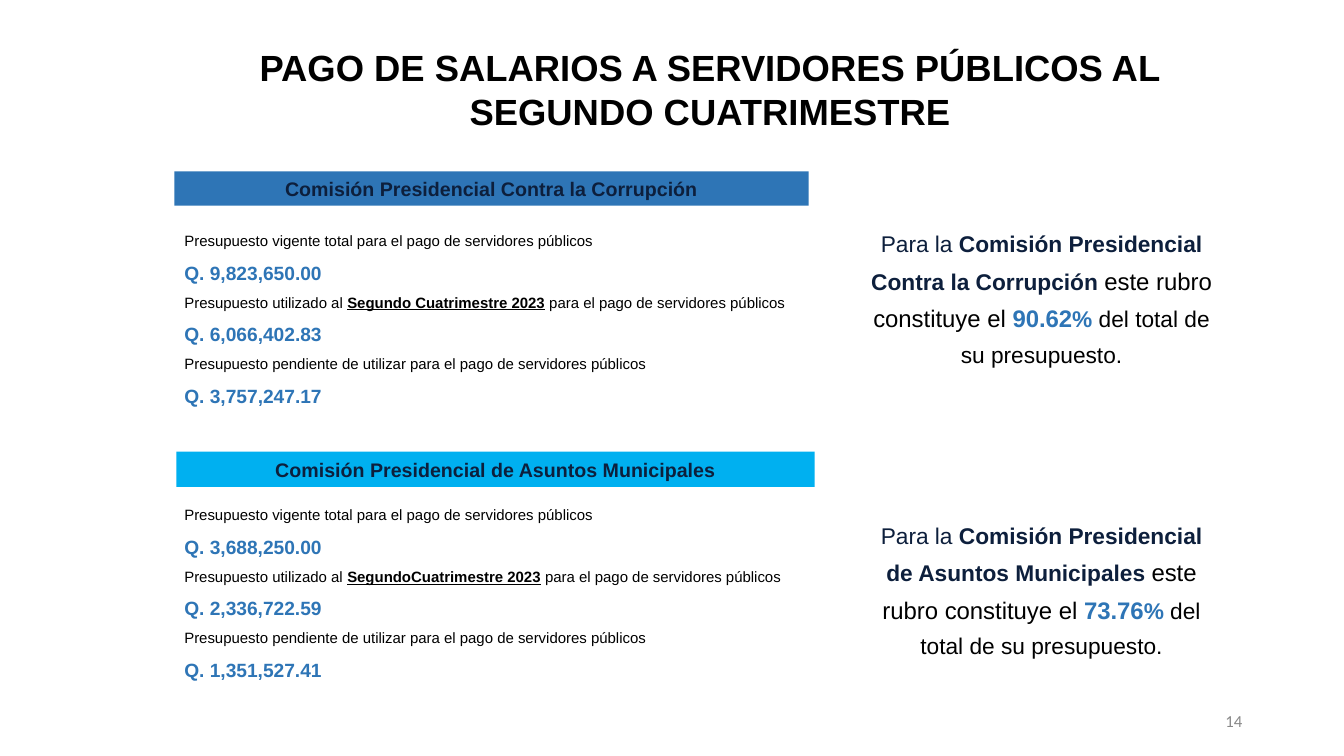
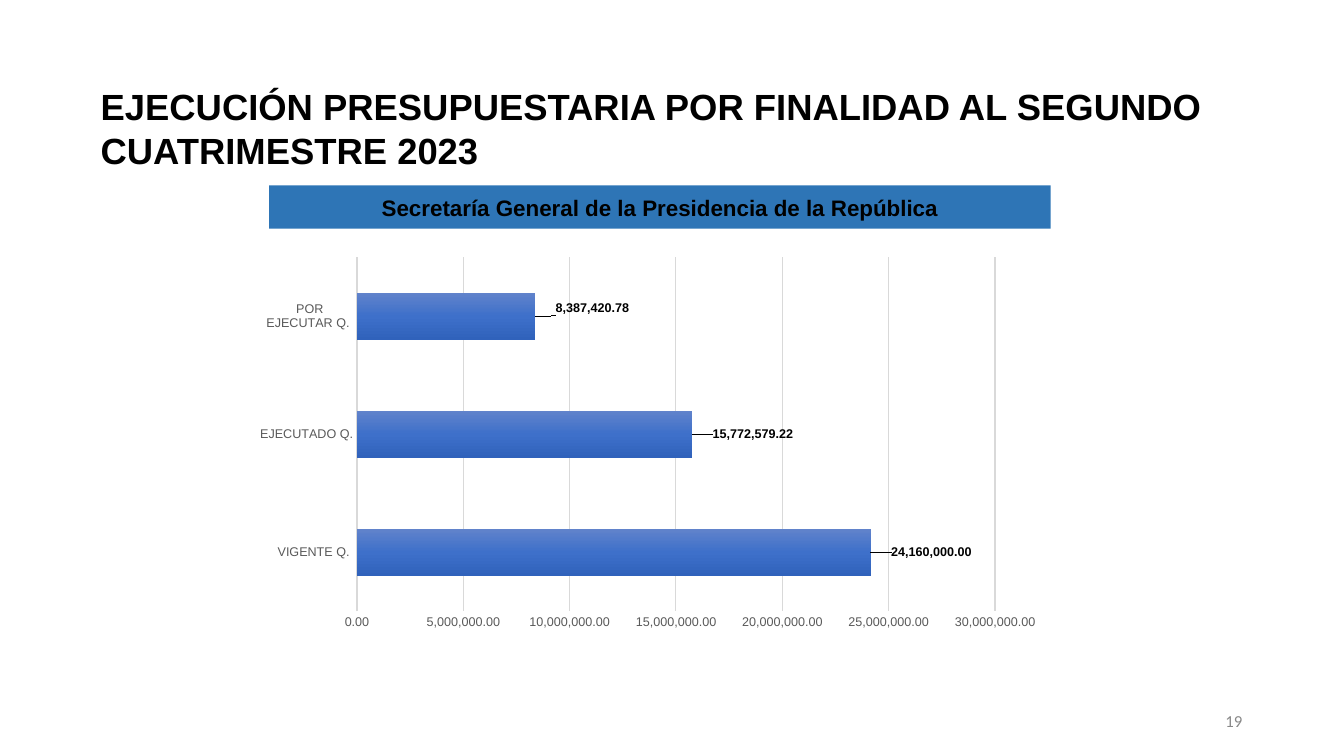
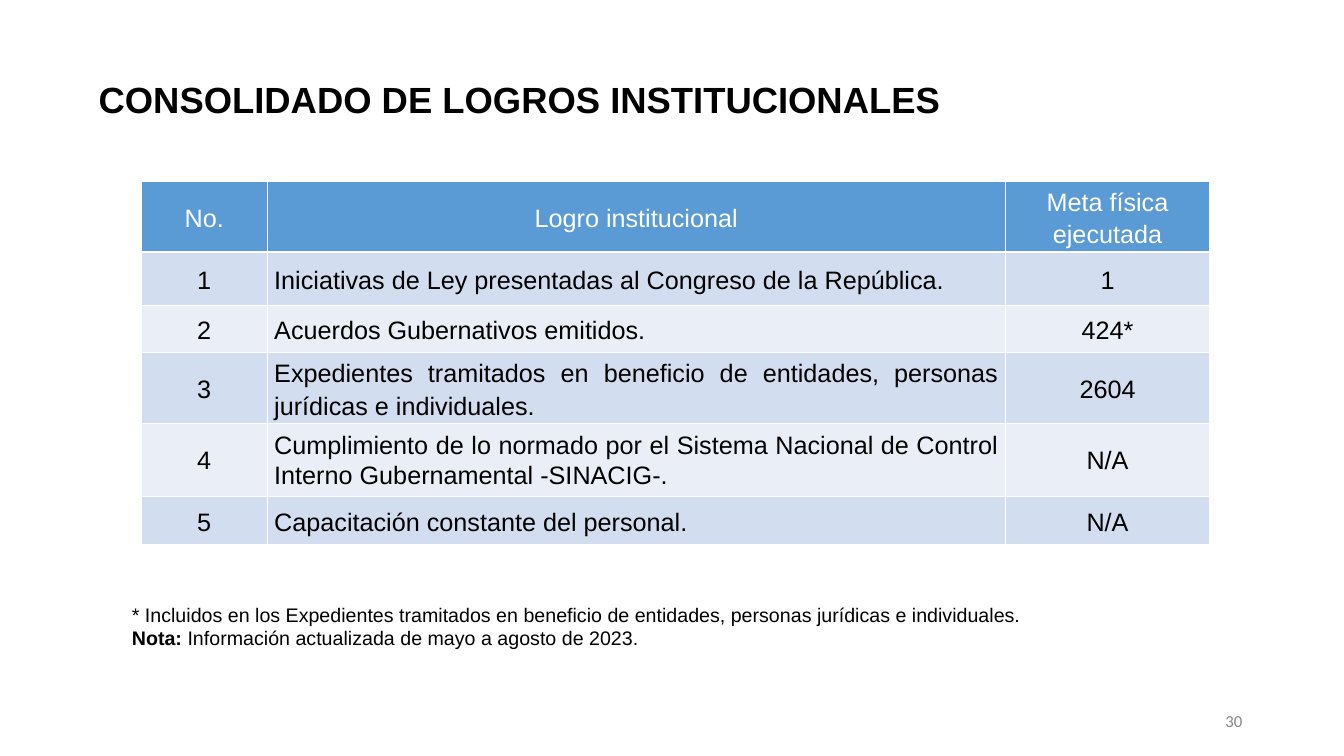
"""Build three slides on salaries, budget execution and institutional results."""
from copy import deepcopy

from pptx import Presentation
from pptx.chart.data import CategoryChartData
from pptx.dml.color import RGBColor
from pptx.enum.chart import XL_CHART_TYPE as ChartType, XL_LABEL_POSITION as LabelPosition
from pptx.enum.chart import XL_TICK_MARK as TickMark
from pptx.enum.shapes import MSO_SHAPE as Preset
from pptx.enum.text import MSO_ANCHOR as Anchor, PP_ALIGN as Align
from pptx.oxml import parse_xml
from pptx.oxml.ns import nsdecls, qn
from pptx.util import Inches, Pt

BLACK, WHITE, NAVY, BLUE, SKY = "000000", "FFFFFF", "0D1F3C", "2E75B6", "00B0F0"
AXIS_GRAY, GRID_GRAY, NUMBER_GRAY = "595959", "D9D9D9", "888888"
HEADER_FILL, ROW_FILLS = "5B9BD5", ("D2DEEF", "EAEFF7")

SALARY_TITLE = "PAGO DE SALARIOS A SERVIDORES PÚBLICOS AL SEGUNDO CUATRIMESTRE"
COMMISSIONS = [
    {
        "name": "Comisión Presidencial Contra la Corrupción",
        "band": (1.73, 1.7, 6.29, 0.34), "fill": BLUE,
        "amounts_box": (1.73, 2.03, 6.29, 2.19),
        "share_box": (8.51, 1.75, 3.64, 2.35),
        "period": "Segundo Cuatrimestre 2023",
        "amounts": ("9,823,650.00", "6,066,402.83", "3,757,247.17"),
        "share": "90.62", "rest_size": 16.2,
    },
    {
        "name": "Comisión Presidencial de Asuntos Municipales",
        "band": (1.75, 4.48, 6.33, 0.35), "fill": SKY,
        "amounts_box": (1.73, 4.48, 6.33, 2.73),
        "share_box": (8.51, 4.63, 3.64, 2.38),
        "period": "SegundoCuatrimestre 2023",
        "amounts": ("3,688,250.00", "2,336,722.59", "1,351,527.41"),
        "share": "73.76", "rest_size": 16.2,
    },
]

BUDGET_TITLE = "EJECUCIÓN PRESUPUESTARIA POR FINALIDAD AL SEGUNDO CUATRIMESTRE 2023"
BUDGET_OFFICE = "Secretaría General de la Presidencia de la República"
BUDGET = [
    ("VIGENTE Q. ", 24160000, (0.02, 0)),
    ("EJECUTADO Q. ", 15772579.22, (0.02, 0)),
    ("POR EJECUTAR Q. ", 8387420.78, (0.02, -0.02)),
]
BAR_GRADIENT = [(0, "6183CB"), (0.5, "3E70CA"), (1, "3062BB")]
NUMBER_FORMAT = "#,##0.00"

RESULTS_TITLE = "CONSOLIDADO DE LOGROS INSTITUCIONALES"
RESULTS = [
    ("No.", "Logro institucional", "Meta física ejecutada"),
    ("1", "Iniciativas de Ley presentadas al Congreso de la República.", "1"),
    ("2", "Acuerdos Gubernativos emitidos.", "424*"),
    ("3", "Expedientes tramitados en beneficio de entidades, personas jurídicas e individuales.", "2604"),
    ("4", "Cumplimiento de lo normado por el Sistema Nacional de Control Interno Gubernamental -SINACIG-.", "N/A"),
    ("5", "Capacitación constante del personal.", "N/A"),
]
COLUMN_WIDTHS = (1.25, 7.32, 2.03)
ROW_HEIGHTS = (0.7, 0.53, 0.47, 0.7, 0.73, 0.47)
FOOTNOTES = [
    [("* Incluidos en los Expedientes tramitados en beneficio de entidades, personas jurídicas e individuales.", {})],
    [("Nota: ", {"bold": True}), ("Información actualizada de mayo a agosto de 2023.", {})],
]


def rgb(value):
    return RGBColor.from_string(value)


def style(font, size=None, color=None, bold=None, underline=None, name=None):
    if size:
        font.size = Pt(size)
    if color:
        font.color.rgb = rgb(color)
    if name:
        font.name = name
    if bold is not None:
        font.bold = bold
    if underline:
        font.underline = True


def write(frame, paragraphs, size, color=BLACK, bold=False, align=Align.LEFT,
          spacing=1.0, anchor=Anchor.TOP, name="Arial"):
    frame.word_wrap = True
    frame.vertical_anchor = anchor
    for index, runs in enumerate(paragraphs):
        paragraph = frame.add_paragraph() if index else frame.paragraphs[0]
        paragraph.alignment = align
        paragraph.line_spacing = spacing
        style(paragraph.font, size, color, bold, name=name)
        for text, changes in runs:
            run = paragraph.add_run()
            run.text = text
            style(run.font, **changes)


def add_text(slide, box, paragraphs, size, **options):
    shape = slide.shapes.add_textbox(*map(Inches, box))
    write(shape.text_frame, paragraphs, size, **options)


def add_band(slide, box, text, fill, size, color):
    shape = slide.shapes.add_shape(Preset.RECTANGLE, *map(Inches, box))
    shape.shadow.inherit = False
    shape.fill.solid()
    shape.fill.fore_color.rgb = rgb(fill)
    shape.line.fill.background()
    write(shape.text_frame, [[(text, {})]], size, color=color, bold=True,
          align=Align.CENTER, anchor=Anchor.MIDDLE)


def new_slide(presentation, title, box, number, align=Align.LEFT):
    slide = presentation.slides.add_slide(presentation.slide_layouts[6])
    add_text(slide, box, [[(title, {})]], 26, bold=True, align=align)
    add_text(slide, (9.42, 6.95, 3, 0.4), [[(number, {})]], 12, color=NUMBER_GRAY,
             align=Align.RIGHT, anchor=Anchor.MIDDLE, name="Calibri")
    return slide


def add_commission(slide, commission):
    add_band(slide, commission["band"], commission["name"], commission["fill"], 14, NAVY)
    labels = [
        [("Presupuesto vigente total para el pago de servidores públicos", {})],
        [("Presupuesto utilizado al ", {}),
         (commission["period"], {"bold": True, "underline": True}),
         (" para el pago de servidores públicos", {})],
        [("Presupuesto pendiente de utilizar para el pago de servidores públicos", {})],
    ]
    paragraphs = []
    for label, amount in zip(labels, commission["amounts"]):
        value = (f"Q. {amount}", {"size": 13.7, "color": BLUE, "bold": True})
        paragraphs += [label, [value]]
    add_text(slide, commission["amounts_box"], paragraphs, 10.7, align=Align.JUSTIFY,
             spacing=1.5, anchor=Anchor.MIDDLE)
    share = [
        ("Para la ", {"color": NAVY}),
        (commission["name"] + " ", {"color": NAVY, "bold": True}),
        ("este rubro constituye el ", {"size": 17.1}),
        (commission["share"], {"size": 17.1, "color": BLUE, "bold": True}),
        ("%", {"color": BLUE, "bold": True}),
        (" del total de su presupuesto.", {"size": commission["rest_size"]}),
    ]
    add_text(slide, commission["share_box"], [share], 16.2, align=Align.CENTER,
             spacing=1.3, anchor=Anchor.MIDDLE)


def manual_layout(x, y, size=None):
    target = '<c:layoutTarget val="inner"/><c:xMode val="edge"/><c:yMode val="edge"/>' if size else ""
    extent = f'<c:w val="{size[0]}"/><c:h val="{size[1]}"/>' if size else ""
    return parse_xml(f'<c:layout {nsdecls("c")}><c:manualLayout>{target}<c:x val="{x}"/>'
                     f'<c:y val="{y}"/>{extent}</c:manualLayout></c:layout>')


def add_budget_chart(slide):
    data = CategoryChartData(number_format=NUMBER_FORMAT)
    data.categories = [category for category, _, _ in BUDGET]
    data.add_series("Series 1", [value for _, value, _ in BUDGET])
    box = map(Inches, (2.58, 2.45, 8.16, 3.8))
    chart = slide.shapes.add_chart(ChartType.BAR_CLUSTERED, *box, data).chart
    chart.has_legend = chart.has_title = False
    style(chart.font, 10, BLACK, name="Arial")
    for axis in (chart.category_axis, chart.value_axis):
        axis.major_tick_mark = axis.minor_tick_mark = TickMark.NONE
        style(axis.tick_labels.font, 9, AXIS_GRAY, name="Arial")
    chart.category_axis.format.line.color.rgb = rgb(GRID_GRAY)
    chart.category_axis.format.line.width = Pt(1)
    value_axis = chart.value_axis
    value_axis.minimum_scale, value_axis.maximum_scale, value_axis.major_unit = 0, 30000000, 5000000
    value_axis.format.line.fill.background()
    value_axis.major_gridlines.format.line.color.rgb = rgb(GRID_GRAY)
    value_axis.major_gridlines.format.line.width = Pt(0.75)
    value_axis.tick_labels.number_format = NUMBER_FORMAT
    value_axis.tick_labels.number_format_is_linked = False

    plot = chart.plots[0]
    plot.gap_width = 150
    plot.vary_by_categories = False
    series = plot.series[0]
    fill = series.format.fill
    fill.gradient()
    fill.gradient_angle = 270
    stop_list = next(chart.element.iter(qn("a:gsLst")))
    stop_list.insert(1, deepcopy(stop_list[0]))
    for stop, (position, color) in zip(fill.gradient_stops, BAR_GRADIENT):
        stop.position = position
        stop.color.rgb = rgb(color)

    for index in range(len(BUDGET)):
        label = series.points[index].data_label
        style(label.font, 9, BLACK, True, name="Arial")
        label.position = LabelPosition.OUTSIDE_END
    for element, (_, _, offset) in zip(chart.element.iter(qn("c:dLbl")), BUDGET):
        element.insert(1, manual_layout(*offset))
    plot_area = next(chart.element.iter(qn("c:plotArea")))
    for layout in plot_area.findall(qn("c:layout")):
        plot_area.remove(layout)
    plot_area.insert(0, manual_layout(0.115, 0.027, (0.778, 0.93)))


def add_results_table(slide):
    box = map(Inches, (1.4, 1.8, sum(COLUMN_WIDTHS), sum(ROW_HEIGHTS)))
    table = slide.shapes.add_table(len(RESULTS), len(COLUMN_WIDTHS), *box).table
    for column, width in zip(table.columns, COLUMN_WIDTHS):
        column.width = Inches(width)
    for row_index, (values, height) in enumerate(zip(RESULTS, ROW_HEIGHTS)):
        table.rows[row_index].height = Inches(height)
        is_header = row_index == 0
        for column_index, text in enumerate(values):
            cell = table.cell(row_index, column_index)
            cell.fill.solid()
            cell.fill.fore_color.rgb = rgb(HEADER_FILL if is_header else ROW_FILLS[(row_index - 1) % 2])
            cell.margin_left = cell.margin_right = Inches(0.07)
            cell.margin_top = cell.margin_bottom = 0
            justified = column_index == 1 and not is_header
            write(cell.text_frame, [[(text, {"bold": False})]], 18,
                  color=WHITE if is_header else BLACK,
                  align=Align.JUSTIFY if justified else Align.CENTER,
                  spacing=1.07 if row_index == 4 else 1.15)
            cell.vertical_anchor = Anchor.MIDDLE


def main():
    presentation = Presentation()
    presentation.slide_width, presentation.slide_height = Inches(13.33), Inches(7.5)

    salaries = new_slide(presentation, SALARY_TITLE, (1.75, 0.4, 10.59, 0.98), "14", Align.CENTER)
    for commission in COMMISSIONS:
        add_commission(salaries, commission)

    budget = new_slide(presentation, BUDGET_TITLE, (0.9, 0.79, 11.52, 0.98), "19")
    add_band(budget, (2.67, 1.84, 7.75, 0.43), BUDGET_OFFICE, BLUE, 16, BLACK)
    add_budget_chart(budget)

    results = new_slide(presentation, RESULTS_TITLE, (0.88, 0.72, 10.29, 0.54), "30")
    add_results_table(results)
    add_text(results, (1.21, 5.93, 10.97, 0.57), FOOTNOTES, 14)

    presentation.save("out.pptx")


if __name__ == "__main__":
    main()
